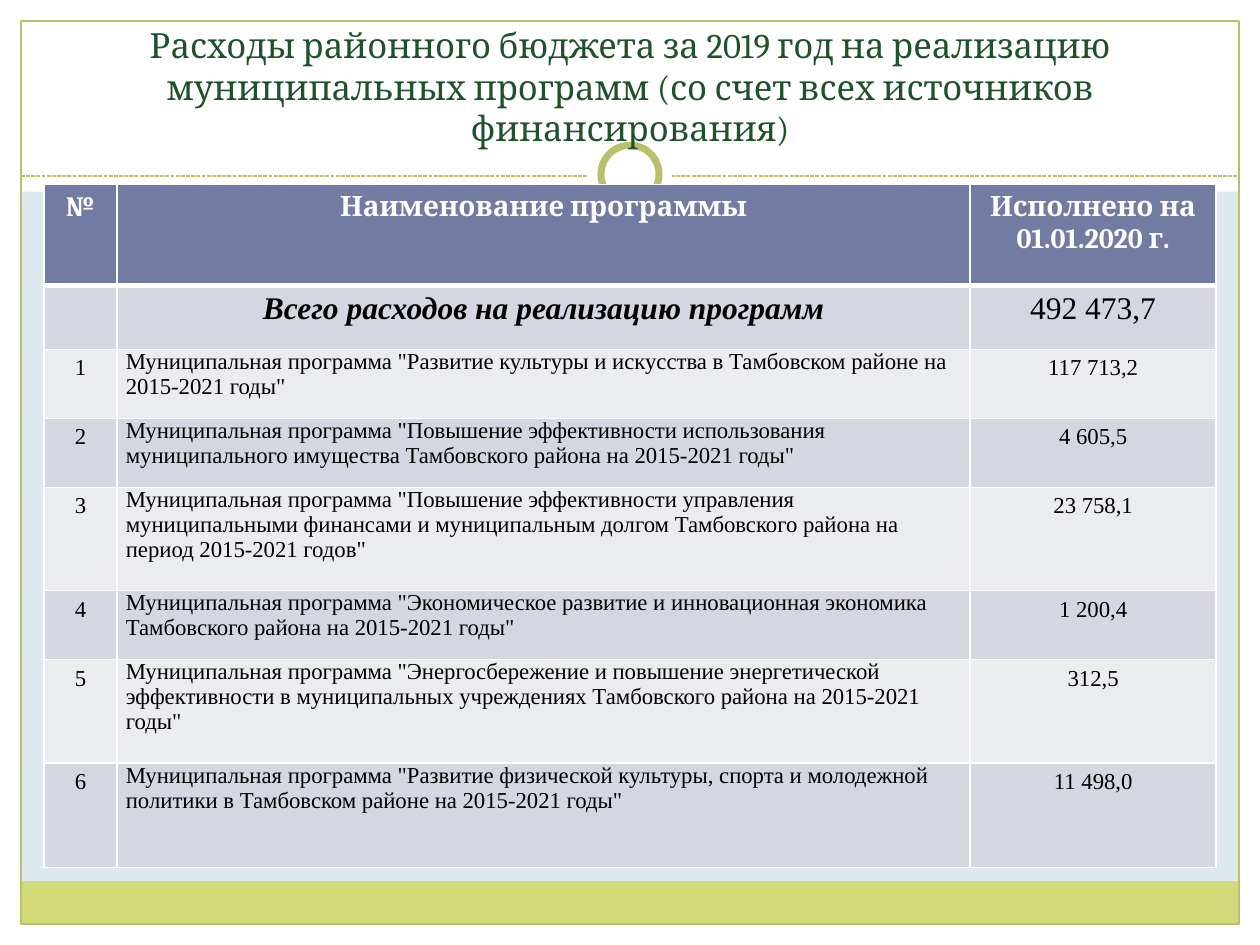
from lxml import etree
from pptx import Presentation
from pptx import util as u
from pptx.dml.color import RGBColor
from pptx.enum import dml, shapes as sh, text as tx
from pptx.oxml import ns

Pt = u.Pt
WHITE, OLIVE = "FFFFFF", "B9C06C"


def color(code):
    return RGBColor.from_string(code)


def shape(kind, box, fill=None, line=None, width=0.75):
    item = slide.shapes.add_shape(kind, *[Pt(v) for v in box])
    item.shadow.inherit = False
    if fill:
        item.fill.solid()
        item.fill.fore_color.rgb = color(fill)
    else:
        item.fill.background()
    if line:
        item.line.color.rgb = color(line)
        item.line.width = Pt(width)
    else:
        item.line.fill.background()


prs = Presentation()
prs.slide_width, prs.slide_height = Pt(720), Pt(540)
slide = prs.slides.add_slide(prs.slide_layouts[6])
slide.background.fill.solid()
slide.background.fill.fore_color.rgb = color("DDE9EC")

# White margins and header, green footer band, frame
rect, oval = sh.MSO_SHAPE.RECTANGLE, sh.MSO_SHAPE.OVAL
for box in [(0, 528, 720, 12), (0, 0, 720, 109.5), (0, 0, 12, 540), (708, 0, 12, 540)]:
    shape(rect, box, WHITE)
shape(rect, (11.75, 503.5, 695.75, 24.5), "D2DA7A")
shape(rect, (12, 12, 696, 516), None, OLIVE)

# Dashed divider with a ring in the middle
rule = slide.shapes.add_connector(
    sh.MSO_CONNECTOR.STRAIGHT, Pt(12), Pt(100.6), Pt(708), Pt(100.6))
rule.line.color.rgb = color(OLIVE)
rule.line.width = Pt(0.75)
rule.line.dash_style = dml.MSO_LINE.SQUARE_DOT
etree.SubElement(rule._element.spPr, ns.qn("a:effectLst"))
shape(oval, (336, 75.6, 48, 48), WHITE)
shape(oval, (343.4, 83, 33.2, 33.2), WHITE, OLIVE, 4)

# Title
title = slide.shapes.add_textbox(Pt(24), Pt(18), Pt(672), Pt(70.5))
frame = title.text_frame
frame.word_wrap = True
frame.vertical_anchor = tx.MSO_ANCHOR.BOTTOM
frame.text = ("Расходы районного бюджета за 2019 год на реализацию муниципальных "
              "программ (со счет всех источников финансирования)")
para = frame.paragraphs[0]
para.alignment = tx.PP_ALIGN.CENTER
font = para.runs[0].font
font.size, font.name, font.color.rgb = Pt(19.8), "Cambria", color("1F512B")

# Table content
plans = [
    ("Развитие культуры и искусства в Тамбовском районе на 2015-2021 годы", "117 713,2"),
    ("Повышение эффективности использования муниципального имущества "
     "Тамбовского района на 2015-2021 годы", "4 605,5"),
    ("Повышение эффективности управления муниципальными финансами и муниципальным "
     "долгом Тамбовского района на период 2015-2021 годов", "23 758,1"),
    ("Экономическое развитие и инновационная экономика Тамбовского района "
     "на 2015-2021 годы", "1 200,4"),
    ("Энергосбережение и повышение энергетической эффективности в муниципальных "
     "учреждениях Тамбовского района на 2015-2021 годы", "312,5"),
    ("Развитие физической культуры, спорта и молодежной политики в Тамбовском "
     "районе на 2015-2021 годы", "11 498,0"),
]
rows = [("№", "Наименование программы", "Исполнено на 01.01.2020 г."),
        ("", "Всего расходов на реализацию программ", "492 473,7")]
rows += [(str(n), f'Муниципальная программа "{name}"', sum_)
         for n, (name, sum_) in enumerate(plans, 1)]
wides = [41.75, 487.5, 140.5]
highs = [57.6, 36.6, 39.4, 39.4, 59.1, 39.4, 59.1, 59.8]

# Table
grid = slide.shapes.add_table(
    len(rows), len(wides), Pt(25.2), Pt(105.5), Pt(sum(wides)), Pt(sum(highs))).table
for col, wide in zip(grid.columns, wides):
    col.width = Pt(wide)
for r, (row, high) in enumerate(zip(rows, highs)):
    grid.rows[r].height = Pt(high)
    for c, words in enumerate(row):
        cell = grid.cell(r, c)
        cell.fill.solid()
        cell.fill.fore_color.rgb = color(
            "727CA3" if r == 0 else "D5D7E0" if r % 2 else "EBECF0")
        cell.text = words
        para = cell.text_frame.paragraphs[0]
        name = r > 1 and c == 1
        para.alignment = tx.PP_ALIGN.LEFT if name else tx.PP_ALIGN.CENTER
        if name:
            cell.margin_left = cell.margin_right = Pt(5)
            cell.margin_top = cell.margin_bottom = Pt(0)
        for run in para.runs:
            font = run.font
            font.name = "Times New Roman" if r else "Cambria"
            font.size = Pt((16, 18)[r] if r < 2 else 13)
            font.color.rgb = color("000000" if r else WHITE)
            font.bold = r == 0 or (r, c) == (1, 1)
            font.italic = (r, c) == (1, 1)

        # White borders, thicker under the header
        props = cell._tc.get_or_add_tcPr()
        for i, side in enumerate(("lnL", "lnR", "lnT", "lnB")):
            thick = (r, side) in [(0, "lnB"), (1, "lnT")]
            edge = etree.Element(ns.qn("a:" + side), w=str(Pt(3 if thick else 1)))
            fill = etree.SubElement(edge, ns.qn("a:solidFill"))
            etree.SubElement(fill, ns.qn("a:srgbClr"), val=WHITE)
            props.insert(i, edge)

prs.save("out.pptx")
